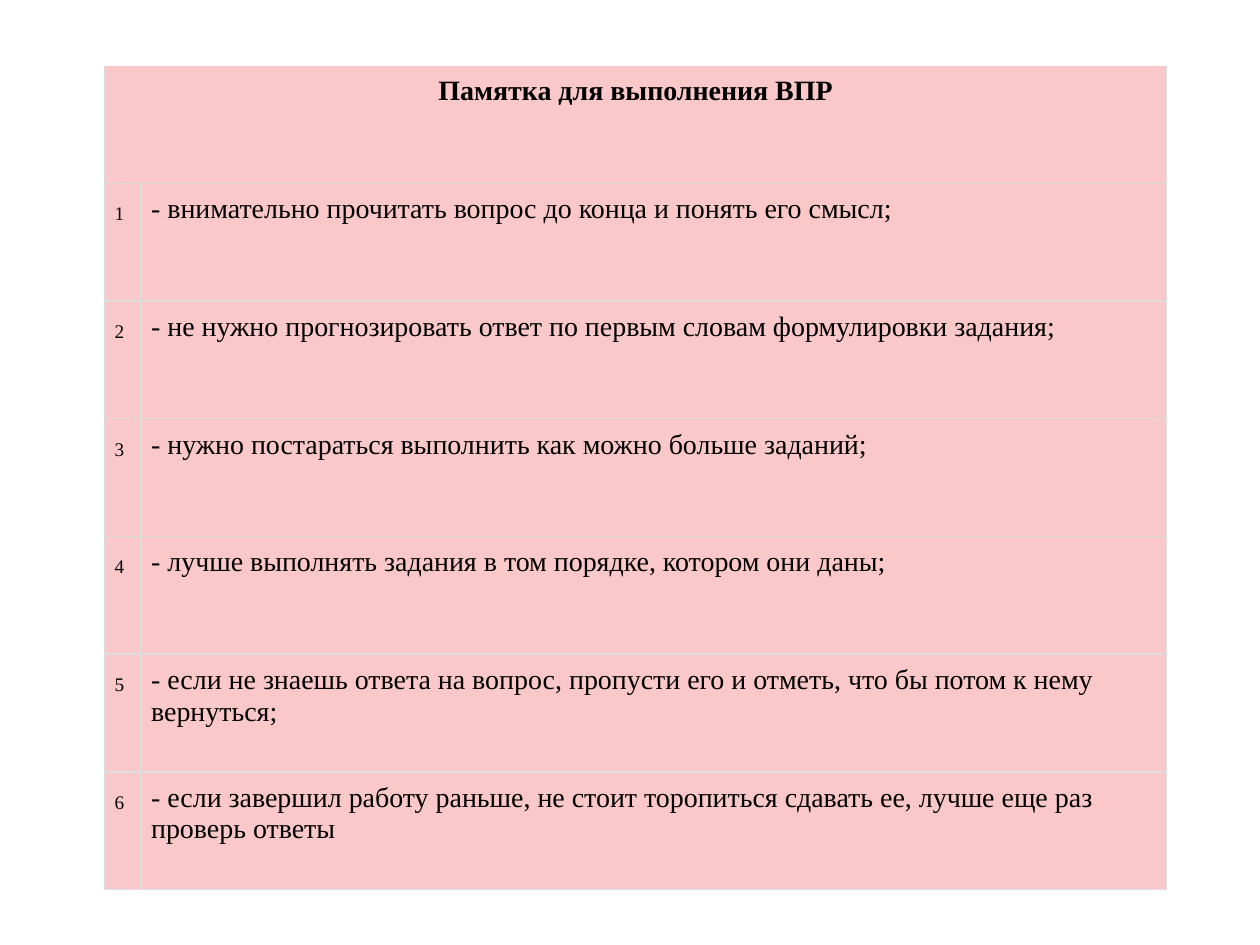
from dataclasses import dataclass

from lxml.etree import SubElement
from pptx import Presentation
from pptx.dml.color import RGBColor
from pptx.enum.text import PP_ALIGN
from pptx.oxml.ns import qn
from pptx.util import Inches, Pt


@dataclass(frozen=True)
class Theme:
    font: str = "Times New Roman"
    text: str = "000000"
    fill: str = "FAC8C8"
    border: str = "DDDDDD"
    border_width: int = Pt(1)
    body_size: int = Pt(16)
    number_size: int = Pt(11)
    line_spacing: int = Pt(18)
    margin: int = Inches(0.08)


THEME = Theme()
HEADING = "Памятка для выполнения ВПР"
TIPS = [
    "- внимательно прочитать вопрос до конца и понять его смысл;",
    "- не нужно прогнозировать ответ по первым словам формулировки задания;",
    "- нужно постараться выполнить как можно больше заданий;",
    "- лучше выполнять задания в том порядке, котором они даны;",
    "- если не знаешь ответа на вопрос, пропусти его и отметь, что бы потом к нему вернуться;",
    "- если завершил работу раньше, не стоит торопиться сдавать ее, лучше еще раз проверь ответы",
]


def set_values(target, values):
    for name, value in values.items():
        setattr(target, name, value)


def style_cell(cell, sides):
    """Give a cell its margins, its fill and a border on the given sides."""
    set_values(cell, {f"margin_{side}": THEME.margin
                      for side in ("left", "right", "top", "bottom")})
    properties = cell._tc.get_or_add_tcPr()
    for side in "LRTB":
        line = SubElement(properties, qn(f"a:ln{side}"), w=str(THEME.border_width))
        if side in sides:
            solid = SubElement(line, qn("a:solidFill"))
            SubElement(solid, qn("a:srgbClr"), val=THEME.border)
        else:
            SubElement(line, qn("a:noFill"))
    cell.fill.solid()
    cell.fill.fore_color.rgb = RGBColor.from_string(THEME.fill)


def write_cell(cell, text, size, bold=False, alignment=PP_ALIGN.LEFT):
    para = cell.text_frame.paragraphs[0]
    set_values(para, {"alignment": alignment, "line_spacing": THEME.line_spacing})
    span = para.add_run()
    span.text = text
    set_values(span.font, {"name": THEME.font, "size": size, "bold": bold})
    span.font.color.rgb = RGBColor.from_string(THEME.text)


def add_tips_table(page, left, top, width, height):
    row_count = len(TIPS) + 1
    table = page.shapes.add_table(row_count, 2, left, top, width, height).table
    set_values(table, {"first_row": False, "horz_banding": False})
    number_width = Inches(0.29)
    table.columns[0].width = number_width
    table.columns[1].width = width - number_width
    for index, row in enumerate(table.rows):
        row.height = height // row_count
        for cell in row.cells:
            style_cell(cell, "LRTB" if index else "LRB")

    # Heading across both columns
    heading = table.cell(0, 0)
    heading.merge(table.cell(0, 1))
    write_cell(heading, HEADING, THEME.body_size, True, PP_ALIGN.CENTER)

    # Numbered tips
    for number, tip in enumerate(TIPS, start=1):
        write_cell(table.cell(number, 0), str(number), THEME.number_size)
        write_cell(table.cell(number, 1), tip, THEME.body_size)


def main():
    deck = Presentation()
    set_values(deck, {"slide_width": Inches(10), "slide_height": Inches(7.5)})
    page = deck.slides.add_slide(deck.slide_layouts[6])
    add_tips_table(page, Inches(0.83), Inches(0.52), Inches(8.43), Inches(6.54))
    deck.save("out.pptx")


if __name__ == "__main__":
    main()
